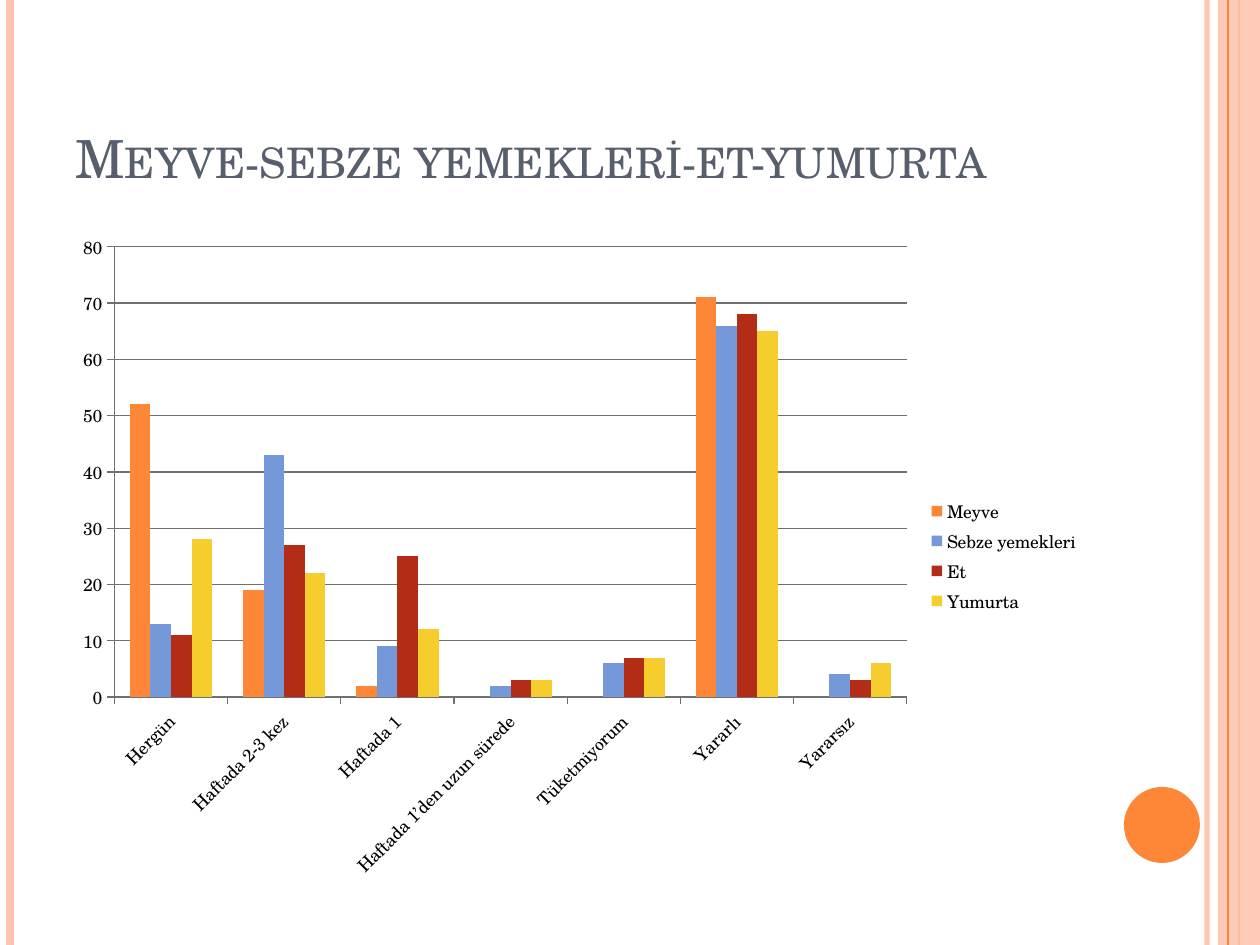
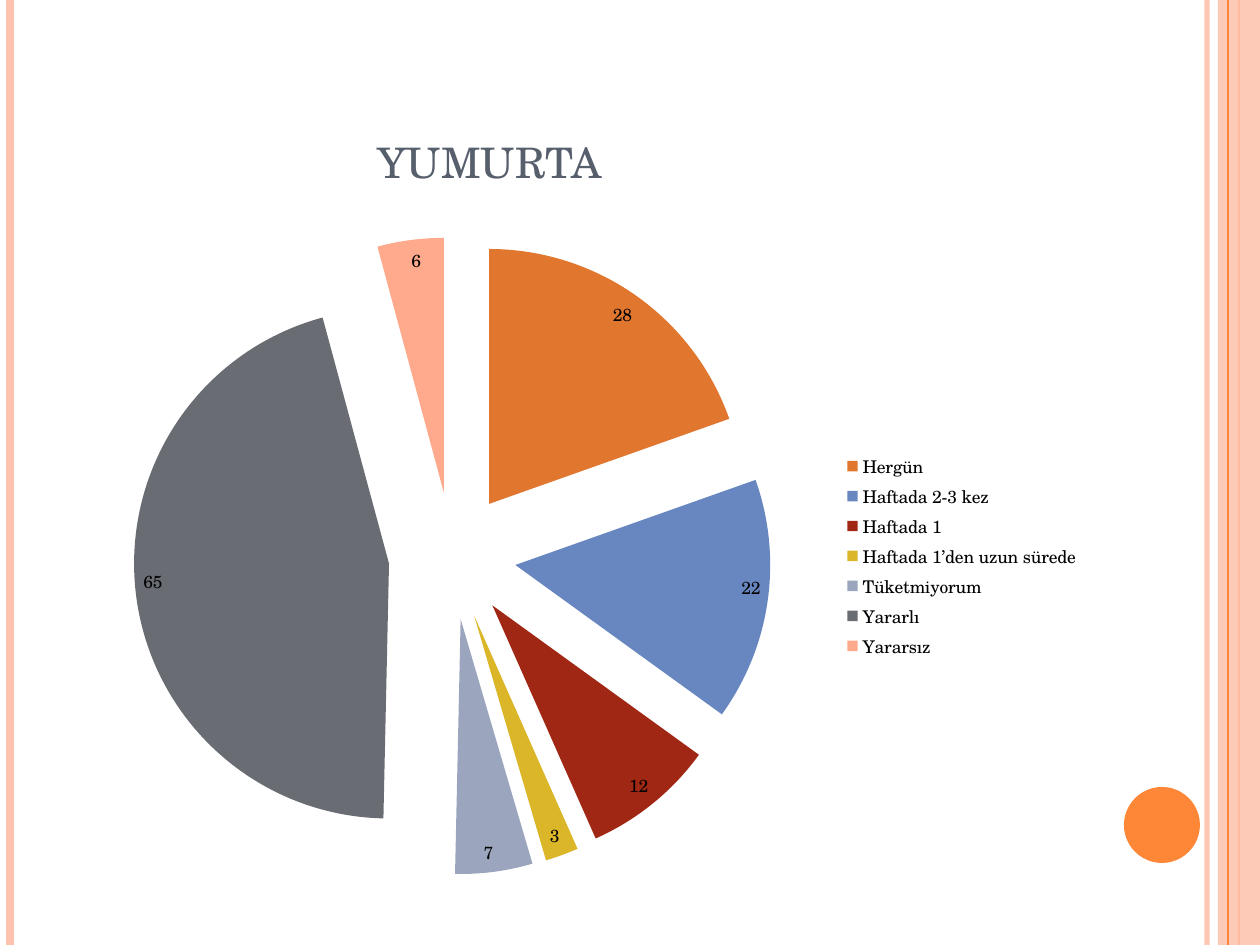
from typing import NamedTuple, Optional

import lxml.etree
import pptx
import pptx.chart.data
import pptx.dml.color
import pptx.enum.chart
import pptx.enum.lang
import pptx.enum.shapes
import pptx.enum.text
import pptx.oxml.ns
import pptx.util

RGBColor = pptx.dml.color.RGBColor
qn = pptx.oxml.ns.qn

# Shared measures, in px
PX_PER_INCH = 126
SLIDE_WIDTH, SLIDE_HEIGHT = 1260, 945
TITLE_BOX = (63, 38, 1029, 157)
CHART_BOX = (63, 220, 1029, 672)

# Shared font and colours
FONT = "TeX Gyre Schola"
TITLE_COLOR = RGBColor(0x57, 0x5F, 0x6D)
BLACK = RGBColor(0x00, 0x00, 0x00)
GRID_GRAY = RGBColor(0x70, 0x70, 0x70)
ORANGE = RGBColor(0xFE, 0x86, 0x37)
PEACH = RGBColor(0xFE, 0xC3, 0xAE)
BLUE = RGBColor(0x75, 0x98, 0xD9)
RED = RGBColor(0xB3, 0x2C, 0x16)
YELLOW = RGBColor(0xF5, 0xCD, 0x2D)
SLICE_COLORS = (
    RGBColor(0xE1, 0x77, 0x2F),
    RGBColor(0x68, 0x87, 0xC0),
    RGBColor(0x9F, 0x27, 0x14),
    RGBColor(0xDA, 0xB6, 0x28),
    RGBColor(0x9B, 0xA5, 0xBE),
    RGBColor(0x69, 0x6D, 0x73),
    RGBColor(0xFF, 0xAA, 0x8C),
)


class Stripe(NamedTuple):
    x: int
    width: float
    color: RGBColor
    opacity: int = 100


class Food(NamedTuple):
    name: str
    values: tuple[Optional[int], ...]
    color: RGBColor


# Stripes behind and in front of the right band
BACK_STRIPES = (
    Stripe(1207, 3, PEACH, 93),
    Stripe(10, 4.5, PEACH),
    Stripe(1239, 1.5, ORANGE),
)
FRONT_STRIPES = (Stripe(1228, 0.75, ORANGE),)

# Survey answers
ANSWERS = (
    "Hergün", "Haftada 2-3 kez", "Haftada 1", "Haftada 1’den uzun sürede",
    "Tüketmiyorum", "Yararlı", "Yararsız",
)
EGG = Food("Yumurta", (28, 22, 12, 3, 7, 65, 6), YELLOW)
FOODS = (
    Food("Meyve", (52, 19, 2, None, None, 71, None), ORANGE),
    Food("Sebze yemekleri", (13, 43, 9, 2, 6, 66, 4), BLUE),
    Food("Et", (11, 27, 25, 3, 7, 68, 3), RED),
    EGG,
)


def px(length: int) -> pptx.util.Emu:
    return pptx.util.Emu(round(length * 914400 / PX_PER_INCH))


def box(lengths: tuple[int, ...]) -> list[pptx.util.Emu]:
    return [px(length) for length in lengths]


def set_opacity(properties, percent: int) -> None:
    color = next(properties.iter(qn("a:srgbClr")))
    lxml.etree.SubElement(color, qn("a:alpha")).set("val", str(percent * 1000))


def add_stripe(slide, stripe: Stripe) -> None:
    line = slide.shapes.add_connector(
        pptx.enum.shapes.MSO_CONNECTOR.STRAIGHT,
        *box((stripe.x, 0, stripe.x, SLIDE_HEIGHT)))
    line.line.width = pptx.util.Pt(stripe.width)
    line.line.color.rgb = stripe.color
    properties = line._element.spPr
    if stripe.opacity < 100:
        set_opacity(properties, stripe.opacity)
    lxml.etree.SubElement(properties, qn("a:effectLst"))


def add_filled_shape(slide, kind, place: tuple[int, ...], color: RGBColor,
                     opacity: int = 100) -> None:
    shape = slide.shapes.add_shape(kind, *box(place))
    shape.shadow.inherit = False
    shape.fill.solid()
    shape.fill.fore_color.rgb = color
    shape.line.fill.background()
    if opacity < 100:
        set_opacity(shape._element.spPr, opacity)


def add_text(slide, text: str, place: tuple[int, ...], *, size: int,
             color: RGBColor, indent: int = 0, small_caps: bool = False) -> None:
    frame = slide.shapes.add_textbox(*box(place)).text_frame
    frame.word_wrap = True
    frame.vertical_anchor = pptx.enum.text.MSO_ANCHOR.BOTTOM
    paragraph = frame.paragraphs[0]
    paragraph._p.get_or_add_pPr().set("marL", str(px(indent)))
    run = paragraph.add_run()
    run.text = text
    run.font.name = FONT
    run.font.size = pptx.util.Pt(size)
    run.font.color.rgb = color
    run.font.language_id = pptx.enum.lang.MSO_LANGUAGE_ID.TURKISH
    if small_caps:
        run._r.get_or_add_rPr().set("cap", "small")


def add_base_slide(presentation, title: str, title_indent: int = 0):
    """Add a slide with the side stripes, the disc and a title."""
    slide = presentation.slides.add_slide(presentation.slide_layouts[6])
    shapes = pptx.enum.shapes.MSO_SHAPE
    for stripe in BACK_STRIPES:
        add_stripe(slide, stripe)
    add_filled_shape(slide, shapes.RECTANGLE, (1218, 0, 42, SLIDE_HEIGHT), PEACH, 87)
    for stripe in FRONT_STRIPES:
        add_stripe(slide, stripe)
    add_filled_shape(slide, shapes.OVAL, (1124, 787, 76, 76), ORANGE)
    add_text(slide, title, TITLE_BOX, size=30, color=TITLE_COLOR,
             indent=title_indent, small_caps=True)
    return slide


def add_survey_chart(slide, kind, foods: tuple[Food, ...]):
    """Add a chart of the answers with a legend on the right."""
    data = pptx.chart.data.CategoryChartData()
    data.categories = ANSWERS
    for food in foods:
        data.add_series(food.name, food.values)
    chart = slide.shapes.add_chart(kind, *box(CHART_BOX), data).chart
    chart.has_title = False
    chart.font.name = FONT
    chart.font.size = pptx.util.Pt(10)
    chart.font.color.rgb = BLACK
    chart.has_legend = True
    chart.legend.position = pptx.enum.chart.XL_LEGEND_POSITION.RIGHT
    chart.legend.include_in_layout = False
    return chart


def set_plot_area(chart, **fractions: float) -> None:
    """Fix the inner plot area as fractions of the chart."""
    plot_area = chart._chartSpace.chart.plotArea
    for layout in plot_area.findall(qn("c:layout")):
        plot_area.remove(layout)
    layout = lxml.etree.Element(qn("c:layout"))
    manual = lxml.etree.SubElement(layout, qn("c:manualLayout"))
    settings = {"layoutTarget": "inner", "xMode": "edge", "yMode": "edge", **fractions}
    for name, value in settings.items():
        lxml.etree.SubElement(manual, qn(f"c:{name}")).set("val", str(value))
    plot_area.insert(0, layout)


def add_food_columns(slide) -> None:
    chart = add_survey_chart(
        slide, pptx.enum.chart.XL_CHART_TYPE.COLUMN_CLUSTERED, FOODS)
    plot = chart.plots[0]
    plot.vary_by_categories = False
    plot.gap_width = 150
    plot.overlap = 0
    for series, food in zip(plot.series, FOODS):
        series.format.fill.solid()
        series.format.fill.fore_color.rgb = food.color

    value_axis, category_axis = chart.value_axis, chart.category_axis
    value_axis.minimum_scale, value_axis.maximum_scale = 0, 80
    value_axis.major_unit = 10
    value_axis.has_major_gridlines = True
    for part in (value_axis, category_axis, value_axis.major_gridlines):
        part.format.line.color.rgb = GRID_GRAY
        part.format.line.width = pptx.util.Pt(0.75)
    for axis in (value_axis, category_axis):
        axis.tick_labels.font.size = pptx.util.Pt(10)
    # Slant the answers by 45 degrees
    text_body = category_axis._element.find(qn("c:txPr")).find(qn("a:bodyPr"))
    text_body.set("rot", str(-45 * 60000))
    text_body.set("vert", "horz")
    set_plot_area(chart, x=0.05, y=0.04, w=0.77, h=0.67)


def add_egg_pie(slide) -> None:
    chart = add_survey_chart(slide, pptx.enum.chart.XL_CHART_TYPE.PIE, (EGG,))
    plot = chart.plots[0]
    plot.vary_by_categories = True
    series = plot.series[0]
    for index, color in enumerate(SLICE_COLORS):
        fill = series.points[index].format.fill
        fill.solid()
        fill.fore_color.rgb = color
    # Pull the slices apart
    explosion = lxml.etree.Element(qn("c:explosion"))
    explosion.set("val", "25")
    series._element.find(qn("c:dPt")).addprevious(explosion)

    plot.has_data_labels = True
    labels = plot.data_labels
    labels.show_value = True
    labels.show_percentage = False
    labels.position = pptx.enum.chart.XL_LABEL_POSITION.INSIDE_END
    labels.font.name = FONT
    labels.font.size = pptx.util.Pt(10)
    labels.font.color.rgb = BLACK


def main() -> None:
    presentation = pptx.Presentation()
    presentation.slide_width = px(SLIDE_WIDTH)
    presentation.slide_height = px(SLIDE_HEIGHT)
    add_food_columns(add_base_slide(presentation, "Meyve-sebze yemekleri-et-yumurta"))
    add_egg_pie(add_base_slide(presentation, "yumurta", title_indent=302))
    presentation.save("out.pptx")


if __name__ == "__main__":
    main()
